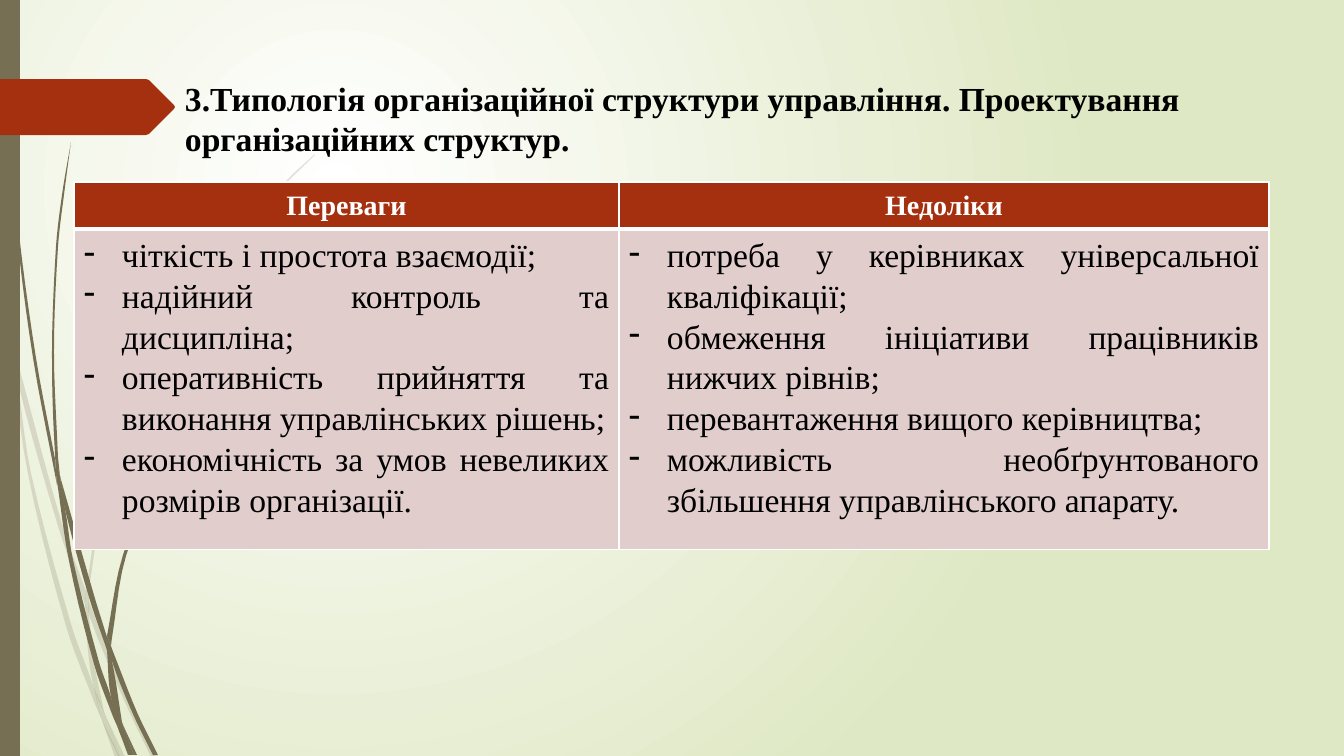
from math import hypot

from lxml import etree
from pptx import Presentation
from pptx.dml.color import RGBColor
from pptx.enum.shapes import MSO_SHAPE
from pptx.enum.text import MSO_ANCHOR, PP_ALIGN
from pptx.oxml import parse_xml
from pptx.oxml.ns import nsdecls, qn
from pptx.util import Pt

RECTANGLE = MSO_SHAPE.RECTANGLE
TOP = MSO_ANCHOR.TOP
LEFT, CENTER, JUSTIFY = PP_ALIGN.LEFT, PP_ALIGN.CENTER, PP_ALIGN.JUSTIFY

EMU_PER_PX = 914400 / 100.8
FONT = "Times New Roman"
OLIVE, RUST, PINK = "766F54", "A53010", "E1CDCC"
BLACK, WHITE, PALE_GREEN = "000000", "FFFFFF", "DFE8C4"

TITLE = ("3.Типологія організаційної структури управління. "
         "Проектування організаційних структур.")
HEADINGS = ["Переваги", "Недоліки"]
POINTS = [
    ["чіткість і простота взаємодії;",
     "надійний контроль та дисципліна;",
     "оперативність прийняття та виконання управлінських рішень;",
     "економічність за умов невеликих розмірів організації."],
    ["потреба у керівниках універсальної кваліфікації;",
     "обмеження ініціативи працівників нижчих рівнів;",
     "перевантаження вищого керівництва;",
     "можливість необґрунтованого збільшення управлінського апарату."],
]

# Each blade of grass is a pair of edges, one there and one back
FAINT_BLADES = [
    ([(11, 353), (9, 325), (0, 284)], [(0, 301), (10, 347)]),
    ([(14, 348), (17, 379), (58, 526), (85, 604)], [(86, 591), (62, 524), (14, 348)]),
    ([(89, 601), (89, 615), (124, 700), (151, 757)],
     [(156, 757), (128, 698), (93, 612), (89, 601)]),
    ([(106, 717), (120, 757)], [(125, 757), (106, 717)]),
    ([(11, 353), (28, 474), (66, 626), (93, 699), (102, 720)],
     [(100, 713), (94, 688), (71, 624), (31, 473), (17, 379), (11, 353)]),
    ([(85, 604), (88, 651), (94, 688), (106, 717)],
     [(104, 712), (92, 651), (89, 615), (85, 604)]),
    ([(315, 154), (291, 176), (270, 199), (230, 246), (159, 351), (108, 465), (86, 591)],
     [(89, 601), (89, 589), (111, 466), (161, 352), (231, 247), (270, 200), (315, 155)]),
    ([(102, 720), (115, 757)], [(120, 757), (102, 720)]),
    ([(86, 591), (85, 604), (89, 613)], [(89, 601), (86, 591)]),
    ([(94, 688), (102, 720), (119, 757)], [(120, 757), (106, 717), (94, 688)]),
]
DARK_BLADES = [
    ([(3, 0), (4, 48), (7, 111), (17, 235), (33, 358), (57, 485)],
     [(55, 459), (36, 358), (19, 234), (8, 110), (5, 48), (4, 0)]),
    ([(60, 476), (65, 509), (89, 597), (107, 650)], [(107, 637), (94, 595), (60, 476)]),
    ([(111, 646), (112, 661), (133, 714), (153, 755)],
     [(158, 755), (137, 712), (114, 654), (111, 646)]),
    ([(57, 481), (69, 561), (94, 664), (112, 714), (118, 728)],
     [(117, 723), (111, 697), (99, 662), (73, 560), (65, 509), (57, 481)]),
    ([(71, 142), (62, 195), (56, 247), (52, 352), (55, 453), (60, 476)],
     [(58, 457), (54, 352), (58, 247), (64, 195), (71, 142)]),
    ([(123, 725), (134, 755)], [(137, 755), (123, 725)]),
    ([(55, 453), (57, 481), (65, 509)], [(60, 476), (55, 453)]),
    ([(262, 347), (233, 376), (206, 408), (157, 478), (123, 555), (107, 636)],
     [(111, 646), (112, 638), (126, 556), (159, 480), (207, 409), (233, 377), (263, 347)]),
    ([(118, 728), (128, 755)], [(132, 755), (118, 728)]),
    ([(107, 650), (111, 697), (123, 725)], [(122, 722), (112, 661), (107, 650)]),
    ([(107, 636), (107, 650), (112, 661)], [(111, 646), (107, 636)]),
    ([(111, 697), (118, 728), (131, 755)], [(134, 755), (123, 725), (111, 697)]),
]


def px(length):
    return round(length * EMU_PER_PX)


def color(value):
    return RGBColor.from_string(value)


def paint(shape, value, alpha=None):
    shape.shadow.inherit = False
    shape.fill.solid()
    shape.fill.fore_color.rgb = color(value)
    shape.line.fill.background()
    if alpha:
        tint = shape.fill._xPr.find(".//" + qn("a:srgbClr"))
        etree.SubElement(tint, qn("a:alpha"), val=str(alpha * 1000))


def write(para, text, size, value, bold, align):
    para.text = text
    para.alignment = align
    for span in para.runs:
        span.font.name = FONT
        span.font.size = Pt(size)
        span.font.bold = bold
        span.font.color.rgb = color(value)


def smooth(edge, steps=5):
    """Points of a Hermite curve that passes through every point of the edge."""
    slopes = []
    for i in range(len(edge)):
        (x0, y0), (x1, y1) = edge[max(i - 1, 0)], edge[min(i + 1, len(edge) - 1)]
        span = hypot(x1 - x0, y1 - y0)
        slopes.append(((x1 - x0) / span, (y1 - y0) / span))
    curve = [edge[0]]
    for start, end, leave, arrive in zip(edge, edge[1:], slopes, slopes[1:]):
        chord = hypot(end[0] - start[0], end[1] - start[1])
        for step in range(1, steps + 1):
            t = step / steps
            ease = t * t * (3 - 2 * t)
            out, back = chord * t * (1 - t) ** 2, chord * t * t * (t - 1)
            curve.append(tuple(a + (b - a) * ease + u * out + v * back
                               for a, b, u, v in zip(start, end, leave, arrive)))
    return curve


def add_outline(page, points, value, alpha=None):
    corners = [(px(x), px(y)) for x, y in points]
    builder = page.shapes.build_freeform(*corners[0], scale=1.0)
    builder.add_line_segments(corners[1:], close=True)
    paint(builder.convert_to_shape(), value, alpha)


def add_background(page):
    page.background.fill.gradient()
    gradient = page._element.find(".//" + qn("a:gradFill"))
    gradient.getparent().replace(gradient, parse_xml(
        f'<a:gradFill {nsdecls("a")} rotWithShape="1"><a:gsLst>'
        f'<a:gs pos="0"><a:srgbClr val="{WHITE}"/></a:gs>'
        f'<a:gs pos="100000"><a:srgbClr val="{PALE_GREEN}"/></a:gs></a:gsLst>'
        '<a:path path="circle"><a:fillToRect l="50000" t="50000" r="100000" b="100000"/>'
        '</a:path></a:gradFill>'))


def add_decoration(page, bar_width, height):
    # Grass
    for blades, alpha in ((FAINT_BLADES, 20), (DARK_BLADES, None)):
        for there, back in blades:
            add_outline(page, smooth(there) + smooth(back), OLIVE, alpha)
    # Side bar
    paint(page.shapes.add_shape(RECTANGLE, 0, 0, px(bar_width), px(height)), OLIVE)


def add_pointer(page, left, top, width, height):
    right, bottom, middle = left + width, top + height, top + height / 2
    add_outline(page, [(left, top), (right - 29, top), (right - 26, top + 1),
                       (right - 1, middle - 2), (right, middle), (right - 1, middle + 2),
                       (right - 26, bottom - 1), (right - 29, bottom), (left, bottom)], RUST)


def add_title(page, left, top, width, height):
    box = page.shapes.add_textbox(px(left), px(top), px(width), px(height))
    frame = box.text_frame
    frame.word_wrap = True
    frame.vertical_anchor = TOP
    frame.margin_left = frame.margin_right = px(10)
    frame.margin_top = px(9)
    write(frame.paragraphs[0], TITLE, 24, BLACK, True, LEFT)


def style_cell(cell, fill, bottom_width):
    # Borders come before the fill in the cell properties
    properties = cell._tc.get_or_add_tcPr()
    for side, width in (("L", 1), ("R", 1), ("T", 1), ("B", bottom_width)):
        properties.append(parse_xml(
            f'<a:ln{side} {nsdecls("a")} w="{Pt(width)}"><a:solidFill>'
            f'<a:srgbClr val="{WHITE}"/></a:solidFill></a:ln{side}>'))
    cell.fill.solid()
    cell.fill.fore_color.rgb = color(fill)
    cell.margin_left = cell.margin_right = px(10)
    cell.margin_top = cell.margin_bottom = px(5)


def add_dash(para, indent):
    properties = para._p.get_or_add_pPr()
    properties.set("marL", str(px(indent)))
    properties.set("indent", str(-px(indent)))
    etree.SubElement(properties, qn("a:buChar"), char="-")


def add_comparison(page, left, top, column_widths, row_heights):
    table = page.shapes.add_table(
        len(row_heights), len(column_widths), px(left), px(top),
        px(sum(column_widths)), px(sum(row_heights))).table
    for row, height in zip(table.rows, row_heights):
        row.height = px(height)
    for i, width in enumerate(column_widths):
        table.columns[i].width = px(width)
        # Heading
        heading = table.cell(0, i)
        style_cell(heading, RUST, 3)
        para = heading.text_frame.paragraphs[0]
        write(para, HEADINGS[i], 20, WHITE, True, CENTER)
        para.line_spacing = 1.1
        # Dashed list
        body = table.cell(1, i)
        style_cell(body, PINK, 1)
        body.text_frame.text = "\n".join(POINTS[i])
        for para, text in zip(body.text_frame.paragraphs, POINTS[i]):
            add_dash(para, 38)
            write(para, text, 24, BLACK, False, JUSTIFY)
            para.line_spacing = 1.1


def main():
    deck = Presentation()
    deck.slide_width, deck.slide_height = px(1344), px(756)
    page = deck.slides.add_slide(deck.slide_layouts[6])
    add_background(page)
    add_decoration(page, 20, 756)
    add_pointer(page, 0, 79, 175, 56)
    add_title(page, 175, 69, 1093, 113)
    add_comparison(page, 74, 182, [545, 650], [44, 296])
    deck.save("out.pptx")


if __name__ == "__main__":
    main()
